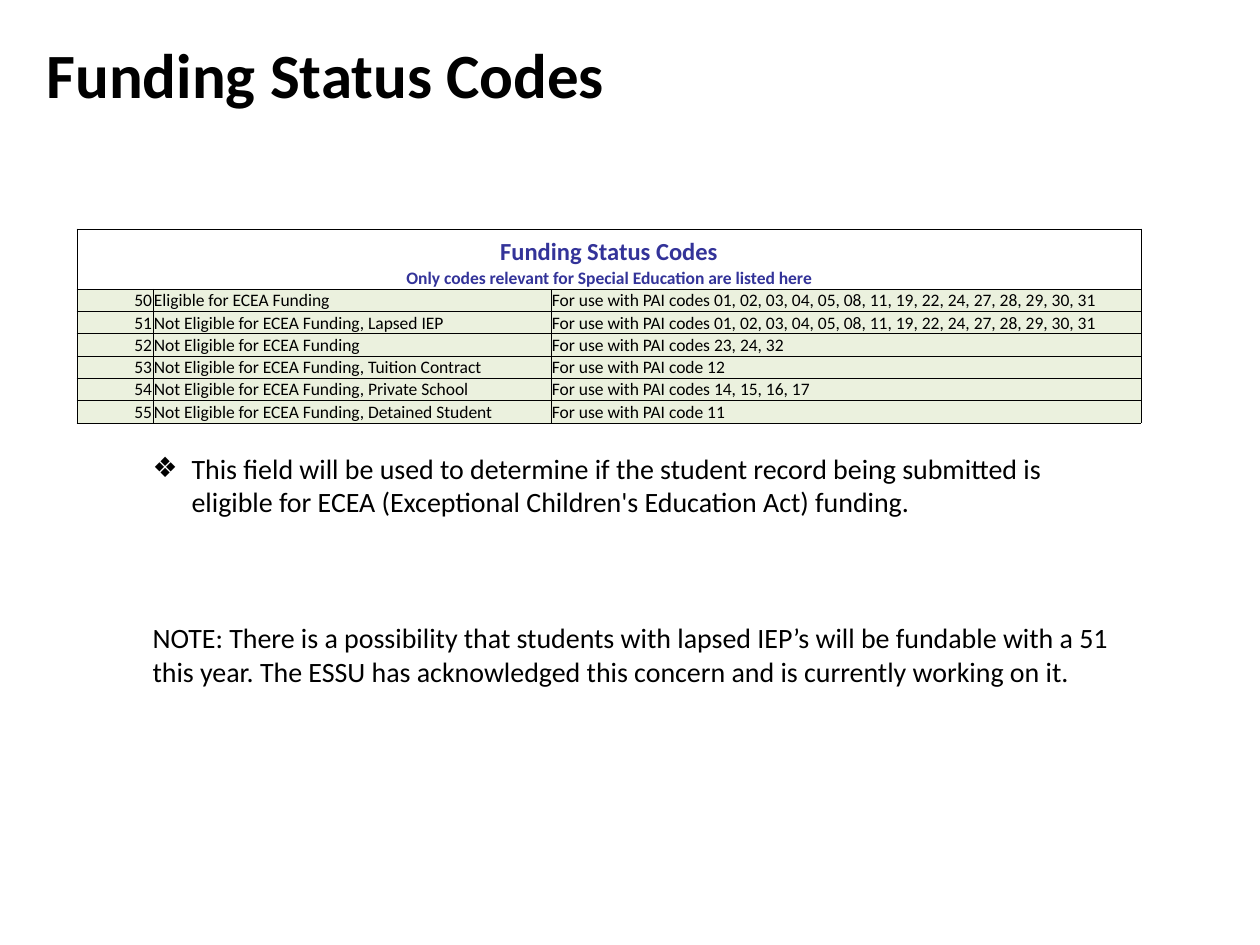
"""Builds the Funding Status Codes slide: a title, a code table and a list."""
from lxml.etree import SubElement
from pptx import Presentation
from pptx.dml.color import RGBColor
from pptx.enum.text import MSO_ANCHOR, MSO_AUTO_SIZE, PP_ALIGN
from pptx.oxml.ns import qn
from pptx.util import Pt

PX = 914400 / 126
THEME = dict(font="Calibri", ink="000000", accent="333399", band="EBF1DE",
             title=36, body=16, head=14, cell=10, border=0.5)


def px(n):
    return round(n * PX)


def write(p, text, size="body", color="ink", bold=False, align=PP_ALIGN.LEFT,
          before=0, bullet=None, indent=0):
    pPr = p._p.get_or_add_pPr()
    pPr.set("marL", str(px(indent)))
    pPr.set("indent", str(-px(indent)))
    if bullet:
        SubElement(pPr, qn("a:buChar"), char=bullet)
    else:
        SubElement(pPr, qn("a:buNone"))
    p.alignment = align
    p.space_before = Pt(before)
    r = p.add_run()
    r.text = text
    f = r.font
    f.name, f.size, f.bold = THEME["font"], Pt(THEME[size]), bold
    f.color.rgb = RGBColor.from_string(THEME[color])


prs = Presentation()
prs.slide_width, prs.slide_height = px(1260), px(945)
s = prs.slides.add_slide(prs.slide_layouts[1])
title, body = s.placeholders

for sp, box in ((title, (34, 29, 994, 89)), (body, (140, 445, 983, 323))):
    sp.left, sp.top, sp.width, sp.height = map(px, box)
    tf = sp.text_frame
    tf.word_wrap = True
    tf.auto_size = MSO_AUTO_SIZE.NONE
    tf.vertical_anchor = MSO_ANCHOR.TOP

write(title.text_frame.paragraphs[0], "Funding Status Codes", size="title", bold=True)

tf = body.text_frame
write(tf.paragraphs[0], "This field will be used to determine if the student record being "
      "submitted is eligible for ECEA (Exceptional Children's Education Act) funding.",
      bullet="❖", indent=39)
write(tf.add_paragraph(), "NOTE: There is a possibility that students with lapsed IEP’s will "
      "be fundable with a 51 this year. The ESSU has acknowledged this concern and is "
      "currently working on it.", before=58.6)

heads = [("Funding Status Codes", "head"),
         ("Only codes relevant for Special Education are listed here", "cell")]
all_pai = "codes 01, 02, 03, 04, 05, 08, 11, 19, 22, 24, 27, 28, 29, 30, 31"
codes = [
    ("50", "", all_pai),
    ("51", ", Lapsed IEP", all_pai),
    ("52", "", "codes 23, 24, 32"),
    ("53", ", Tuition Contract", "code 12"),
    ("54", ", Private School", "codes 14, 15, 16, 17"),
    ("55", ", Detained Student", "code 11"),
]
widths = [76, 398, 590]
heights = [38] + [22] * 7
tbl = s.shapes.add_table(len(heights), len(widths), px(77), px(229),
                         px(sum(widths)), px(sum(heights))).table
tbl.first_row = tbl.horz_banding = False
for col, w in zip(tbl.columns, widths):
    col.width = px(w)
for row, h in zip(tbl.rows, heights):
    row.height = px(h)

for i, row in enumerate(tbl.rows):
    is_head = i < len(heads)
    open_side = {0: "lnB", 1: "lnT"}.get(i)
    for c in row.cells:
        c.margin_left = c.margin_right = c.margin_top = px(1)
        c.margin_bottom = 0
        c.vertical_anchor = MSO_ANCHOR.BOTTOM if is_head else MSO_ANCHOR.MIDDLE
        for side in ("lnL", "lnR", "lnT", "lnB"):
            ln = SubElement(c._tc.get_or_add_tcPr(), qn("a:" + side), w=str(Pt(THEME["border"])))
            if side == open_side:
                SubElement(ln, qn("a:noFill"))
            else:
                SubElement(SubElement(ln, qn("a:solidFill")), qn("a:srgbClr"), val=THEME["ink"])
        if is_head:
            c.fill.background()
        else:
            c.fill.solid()
            c.fill.fore_color.rgb = RGBColor.from_string(THEME["band"])

for i, (text, size) in enumerate(heads):
    tbl.cell(i, 0).merge(tbl.cell(i, 2))
    write(tbl.cell(i, 0).text_frame.paragraphs[0], text, size=size, color="accent",
          bold=True, align=PP_ALIGN.CENTER)

for i, (code, reason, pai) in enumerate(codes, len(heads)):
    status = "Eligible for ECEA Funding" + reason
    if code != "50":
        status = "Not " + status
    for j, text in enumerate((code, status, "For use with PAI " + pai)):
        write(tbl.cell(i, j).text_frame.paragraphs[0], text, size="cell",
              align=PP_ALIGN.LEFT if j else PP_ALIGN.RIGHT)

prs.save("out.pptx")
